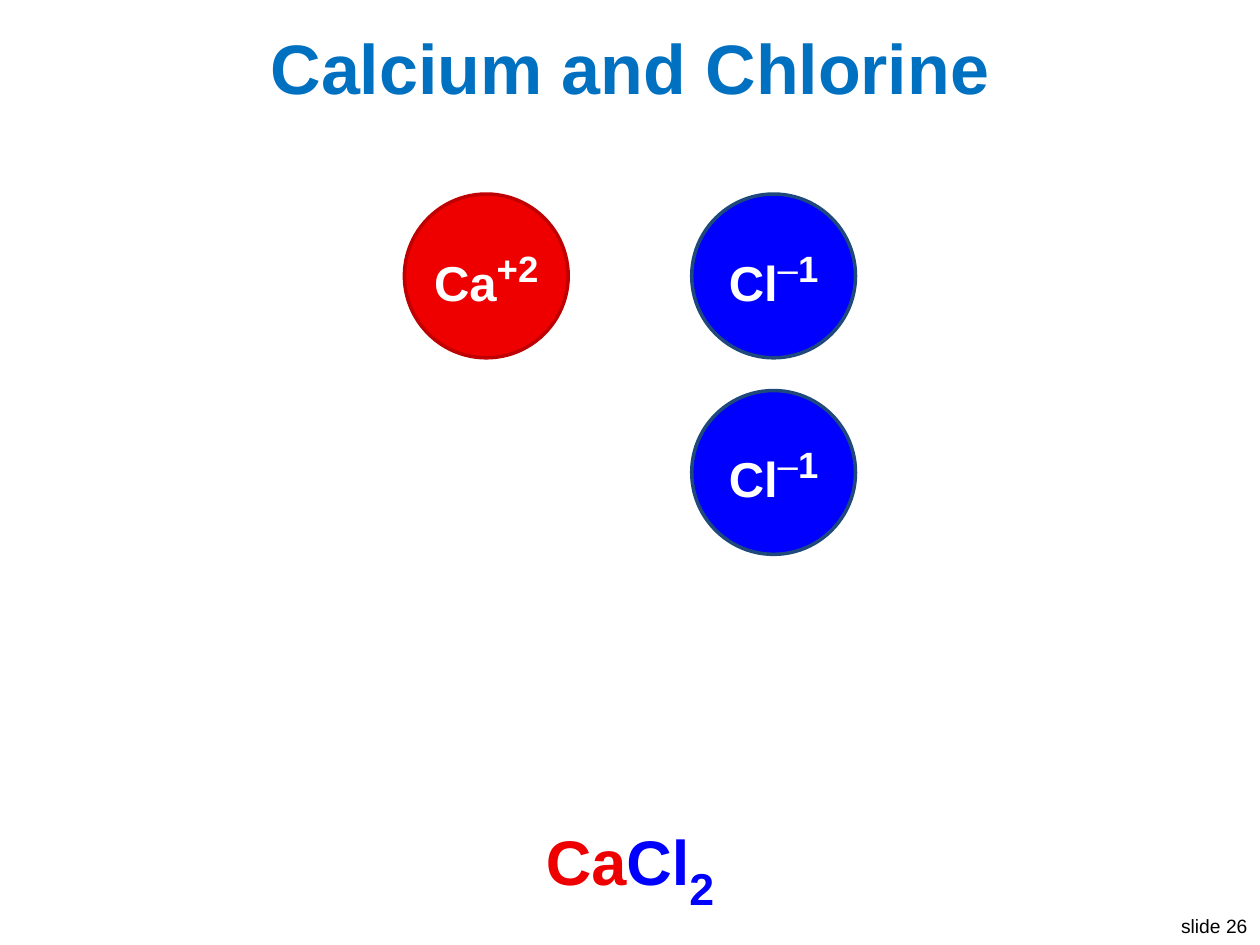
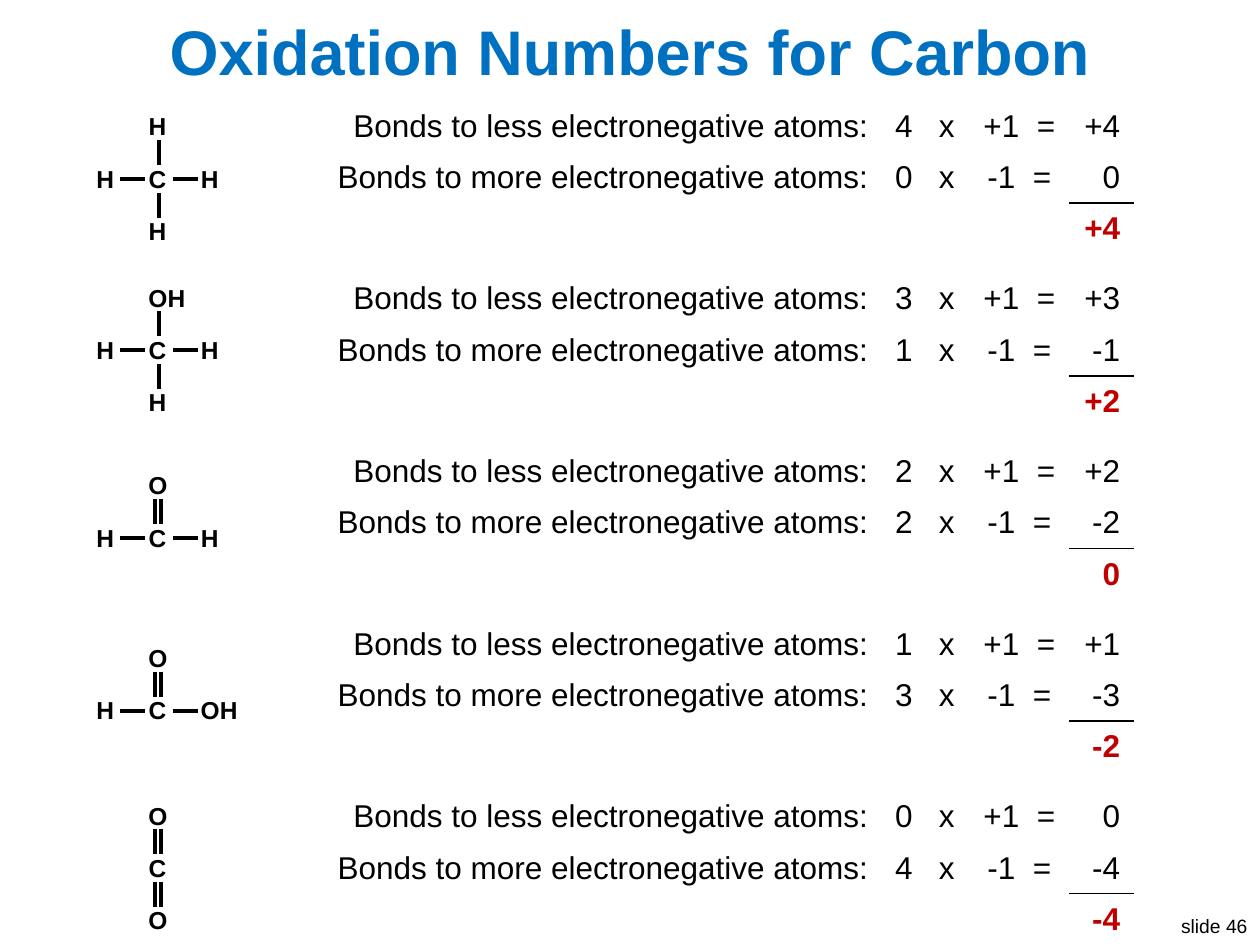
from typing import NamedTuple

from lxml.etree import SubElement
from pptx import Presentation
from pptx.dml.color import RGBColor
from pptx.enum.shapes import MSO_CONNECTOR, MSO_SHAPE
from pptx.enum.text import MSO_ANCHOR, MSO_AUTO_SIZE, PP_ALIGN
from pptx.oxml.ns import qn
from pptx.util import Inches, Pt

FONT = "Arial"
BLACK, WHITE, TITLE = "000000", "FFFFFF", "0070C0"
RED, BLUE, SUM = "EE0000", "0000FF", "C00000"


class Run(NamedTuple):
    text: str
    size: float
    color: str = BLACK
    bold: bool = False
    base: int = 0    # percent above or below the line
    gap: float = 0   # points added after each letter


class Ion(NamedTuple):
    left: float
    top: float
    fill: str
    edge: str
    name: str
    charge: list[Run]


class Carbon(NamedTuple):
    top: float
    less: int   # bonds to less electronegative atoms
    more: int   # bonds to more electronegative atoms
    atoms: dict[str, str]


# Slide 1: ions
PLUS = [Run("+2", 36, WHITE, True, 30)]
MINUS = [Run("‒", 36, WHITE, False, 30), Run("1", 36, WHITE, True, 30)]
IONS = [
    Ion(3.21, 1.54, RED, SUM, "Ca", PLUS),
    Ion(5.49, 1.54, BLUE, "1F497D", "Cl", MINUS),
    Ion(5.49, 3.1, BLUE, "1F497D", "Cl", MINUS),
]

# Slide 2: molecules, with the top of each carbon label
CARBONS = [
    Carbon(1.25, 4, 0, {"up": "H", "left": "H", "right": "H", "down": "H"}),
    Carbon(2.61, 3, 1, {"up": "OH", "left": "H", "right": "H", "down": "H"}),
    Carbon(4.1, 2, 2, {"up": "O", "left": "H", "right": "H"}),
    Carbon(5.47, 1, 3, {"up": "O", "left": "H", "right": "OH"}),
    Carbon(6.72, 0, 4, {"up": "O", "down": "O"}),
]
SIDES = {"up": (0, -1), "left": (-1, 0), "right": (1, 0), "down": (0, 1)}
LABEL_X, LABEL_W, STEP = 1.08, 0.34, 0.415
BOND_X, BOND_DY, REACH, HALF = 1.26, 0.17, 0.21, 0.1
TABLE_X, TABLE_Y, TABLE_H, PITCH = 2.49, 0.8, 1.22, 1.37
COLS = [4.5, 0.7, 0.8, 0.5]


def rgb(code: str) -> RGBColor:
    return RGBColor.from_string(code)


def write(frame, runs: list[Run], align=PP_ALIGN.CENTER) -> None:
    para = frame.paragraphs[0]
    para.alignment = align
    for item in runs:
        run = para.add_run()
        run.text = item.text
        font = run.font
        font.name, font.size, font.bold = FONT, Pt(item.size), item.bold
        font.color.rgb = rgb(item.color)
        props = run._r.get_or_add_rPr()
        if item.base:
            props.set("baseline", str(item.base * 1000))
        if item.gap:
            props.set("spc", str(round(item.gap * 100)))


def add_text(shapes, x: float, y: float, w: float, h: float, runs: list[Run],
             align=PP_ALIGN.CENTER, wrap: bool = False) -> None:
    box = shapes.add_textbox(Inches(x), Inches(y), Inches(w), Inches(h))
    frame = box.text_frame
    frame.word_wrap = wrap
    frame.auto_size = MSO_AUTO_SIZE.SHAPE_TO_FIT_TEXT
    write(frame, runs, align)


def add_line(shapes, x1: float, y1: float, x2: float, y2: float) -> None:
    line = shapes.add_connector(MSO_CONNECTOR.STRAIGHT, Inches(x1), Inches(y1),
                                Inches(x2), Inches(y2))
    line.line.color.rgb = rgb(BLACK)
    line.line.width = Pt(2.25)
    SubElement(line._element.spPr, qn("a:effectLst"))


def add_slide(deck, title: str, size: float, top: float, page: int):
    slide = deck.slides.add_slide(deck.slide_layouts[5])
    # Page label
    add_text(slide.shapes, 9.25, 7.21, 0.75, 0.29,
             [Run(f"slide {page}", 11)], PP_ALIGN.RIGHT)
    # Title
    head = slide.shapes.title
    head.left, head.top = Inches(0.2), Inches(top)
    head.width, head.height = Inches(9.6), Inches(0.8)
    frame = head.text_frame
    frame.vertical_anchor = MSO_ANCHOR.MIDDLE
    frame.auto_size = MSO_AUTO_SIZE.NONE
    write(frame, [Run(title, size, TITLE, True)])
    return slide


def add_ion(shapes, ion: Ion) -> None:
    ball = shapes.add_shape(MSO_SHAPE.OVAL, Inches(ion.left), Inches(ion.top),
                            Inches(1.3), Inches(1.3))
    ball.shadow.inherit = False
    ball.fill.solid()
    ball.fill.fore_color.rgb = rgb(ion.fill)
    ball.line.color.rgb = rgb(ion.edge)
    ball.line.width = Pt(2)
    frame = ball.text_frame
    frame.margin_left = frame.margin_right = 0
    frame.margin_top = frame.margin_bottom = 0
    frame.vertical_anchor = MSO_ANCHOR.MIDDLE
    write(frame, [Run(ion.name, 28, WHITE, True), *ion.charge])


def add_atom(shapes, name: str, dx: int, dy: int, top: float) -> None:
    wide = len(name) > 1
    add_text(shapes, LABEL_X + dx * STEP, top + dy * STEP,
             0.5 if wide else LABEL_W, 0.34, [Run(name, 14, BLACK, True)],
             PP_ALIGN.LEFT if wide else PP_ALIGN.CENTER)


def add_carbon(slide, carbon: Carbon) -> None:
    shapes = slide.shapes.add_group_shape().shapes
    add_atom(shapes, "C", 0, 0, carbon.top)
    for side, name in carbon.atoms.items():
        dx, dy = SIDES[side]
        add_atom(shapes, name, dx, dy, carbon.top)
        x = BOND_X + dx * REACH
        y = carbon.top + BOND_DY + dy * REACH
        # Oxygen alone holds a double bond
        for shift in (-0.03, 0.02) if name == "O" else (0,):
            px, py = x + shift * abs(dy), y + shift * abs(dx)
            ex, ey = HALF * abs(dx), HALF * abs(dy)
            add_line(shapes, px - ex, py - ey, px + ex, py + ey)


def rule(cell, tag: str) -> None:
    edge = SubElement(cell._tc.get_or_add_tcPr(), qn(tag), w=str(Pt(1)))
    fill = SubElement(edge, qn("a:solidFill"))
    SubElement(fill, qn("a:srgbClr"), val=BLACK)


def signed(num: int) -> str:
    return f"{num:+d}" if num else "0"


def spaced(left: str, right: str, gap: float) -> list[Run]:
    return [Run(left, 18), Run(" ", 18, gap=gap), Run(right, 18)]


def count_row(kind: str, count: int, sign: int) -> list[list[Run]]:
    return [
        [Run(f"Bonds to {kind} electronegative atoms:", 18)],
        spaced(str(count), "x", 10),
        spaced(signed(sign), "=", 5),
        [Run(signed(sign * count), 18)],
    ]


def add_count(slide, carbon: Carbon, top: float) -> None:
    total = Run(signed(carbon.less - carbon.more), 18, SUM, True)
    rows = [
        count_row("less", carbon.less, 1),
        count_row("more", carbon.more, -1),
        [[], [], [], [total]],
    ]
    table = slide.shapes.add_table(
        len(rows), len(COLS), Inches(TABLE_X), Inches(top),
        Inches(sum(COLS)), Inches(TABLE_H)).table
    table.horz_banding = False
    for col, width in zip(table.columns, COLS):
        col.width = Inches(width)
    sides = [PP_ALIGN.RIGHT, PP_ALIGN.CENTER, PP_ALIGN.CENTER, PP_ALIGN.RIGHT]
    for r, row in enumerate(rows):
        for c, runs in enumerate(row):
            cell = table.cell(r, c)
            cell.vertical_anchor = MSO_ANCHOR.MIDDLE
            # The sum line lies between the last two rows
            if c == 3 and r:
                rule(cell, "a:lnB" if r == 1 else "a:lnT")
            cell.fill.background()
            write(cell.text_frame, runs, sides[c])


def main() -> None:
    deck = Presentation()
    deck.slide_width, deck.slide_height = Inches(10), Inches(7.5)

    # Slide 1
    slide = add_slide(deck, "Calcium and Chlorine", 40, 0.13, 26)
    add_text(slide.shapes, 3.75, 6.37, 2.5, 0.71,
             [Run("Ca", 36, RED, True), Run("Cl", 36, BLUE, True),
              Run("2", 44, BLUE, True, -25)], wrap=True)
    for ion in IONS:
        add_ion(slide.shapes, ion)

    # Slide 2
    slide = add_slide(deck, "Oxidation Numbers for Carbon", 36, 0, 46)
    for i, carbon in enumerate(CARBONS):
        add_count(slide, carbon, TABLE_Y + i * PITCH)
        add_carbon(slide, carbon)

    deck.save("out.pptx")


if __name__ == "__main__":
    main()
